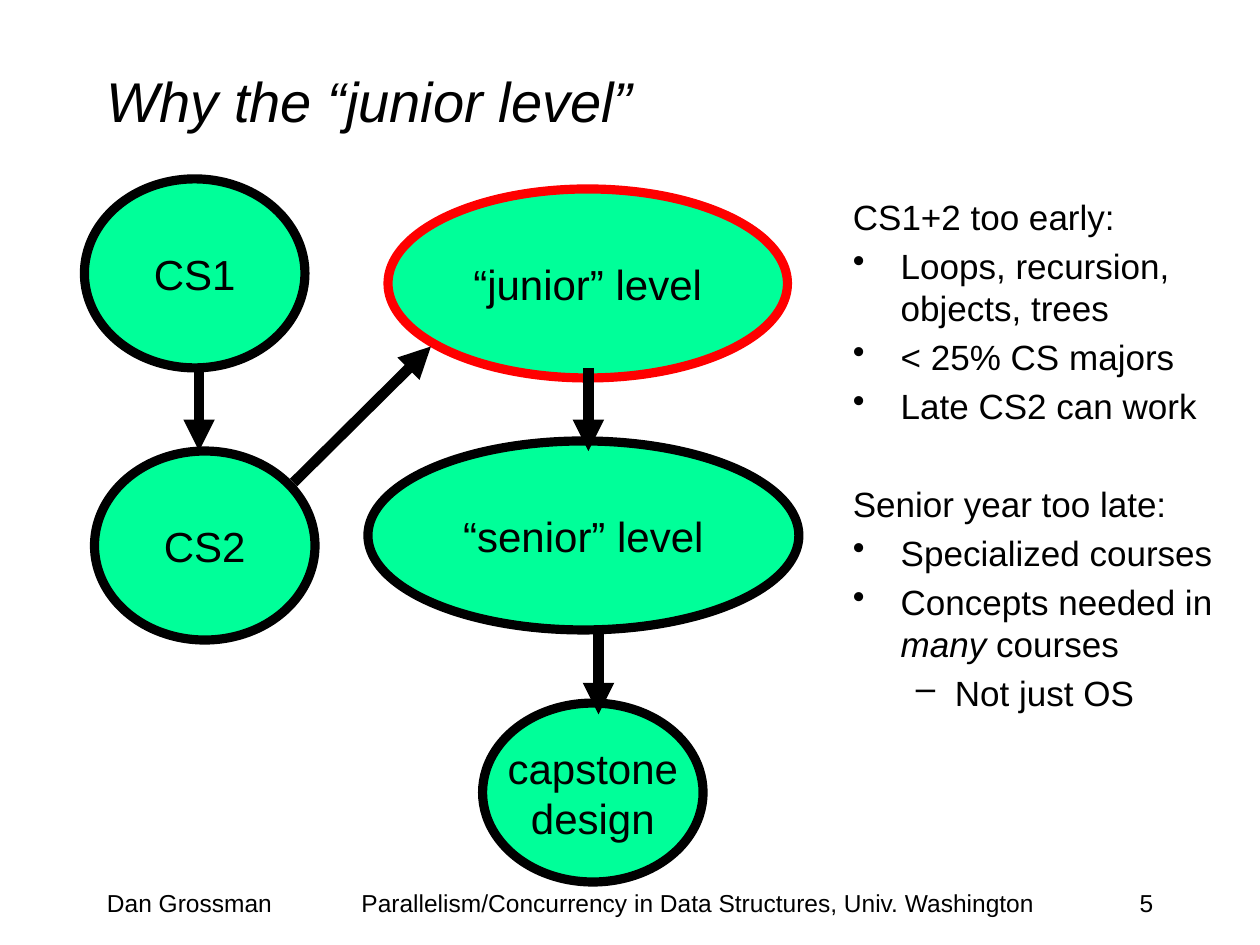
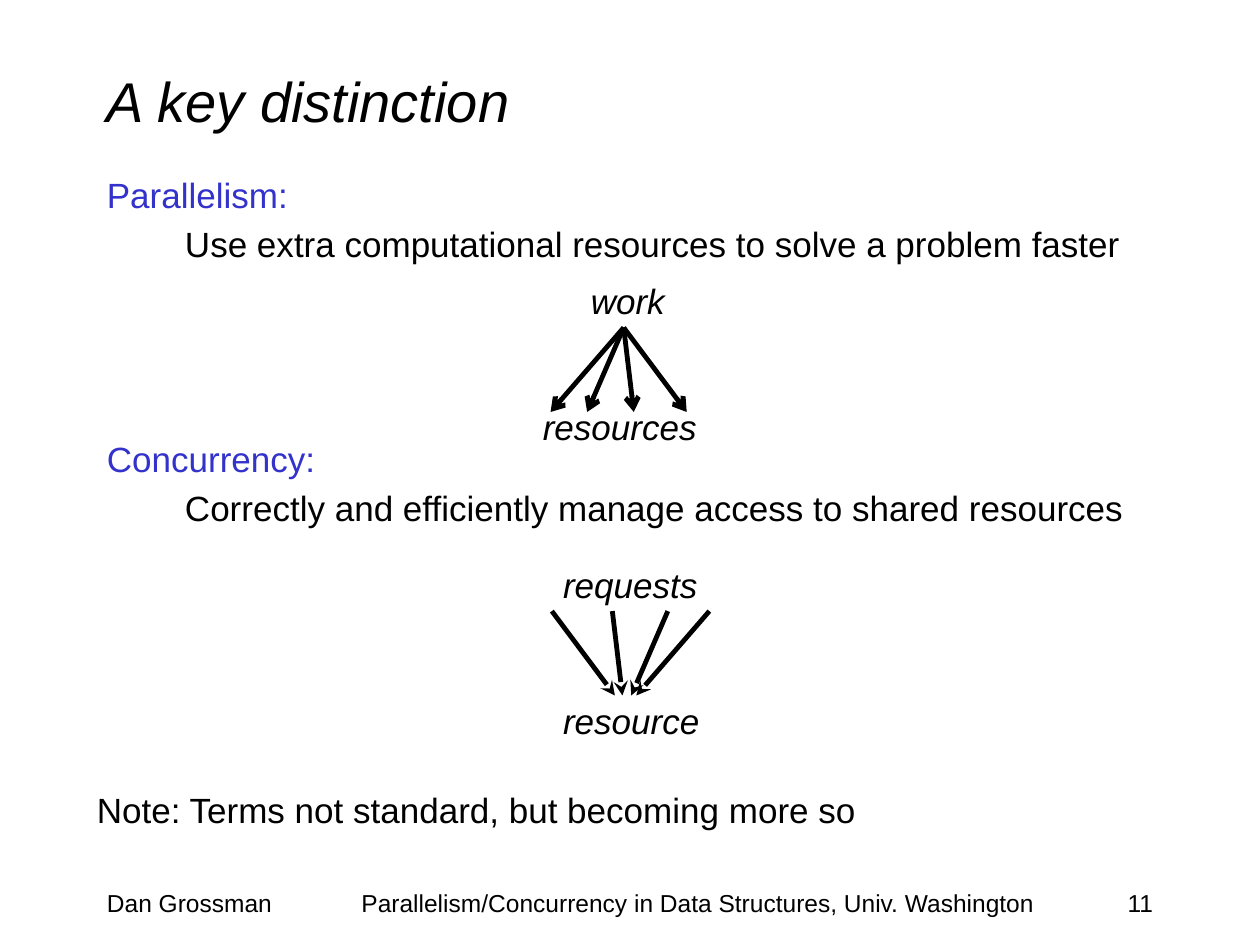
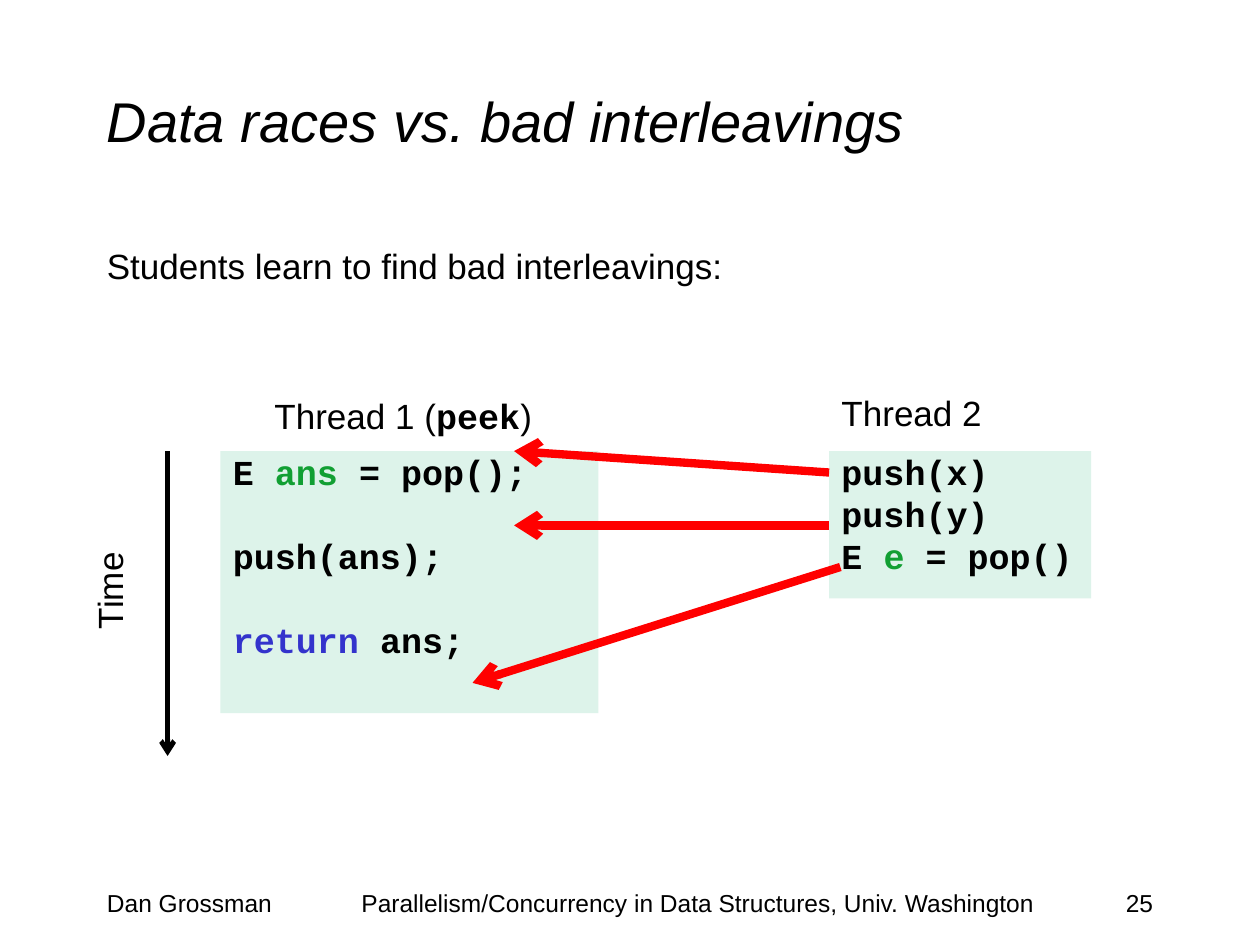
"""Builds three lecture slides on teaching parallelism and concurrency."""
from lxml import etree
from pptx import Presentation
from pptx import util as u
from pptx.dml.color import RGBColor
from pptx.enum import shapes, text
from pptx.oxml import ns

BLACK, RED, BLUE, GREEN = "000000", "FF0000", "3333CC", "119F33"
MINT, PALE = "00FF99", "DDF3EA"
SANS, MONO = "Arial", "Courier New"
LEFT, MID, RIGHT = text.PP_ALIGN.LEFT, text.PP_ALIGN.CENTER, text.PP_ALIGN.RIGHT
hue = RGBColor.from_string


def write(shape, rows, size=20, name=SANS, align=LEFT, gap=0, wrap=True, **style):
    """Fills a shape with rows of plain text or (text, colour) runs."""
    frame = shape.text_frame
    frame.word_wrap = wrap
    for i, row in enumerate(rows):
        para = frame.paragraphs[0] if i == 0 else frame.add_paragraph()
        para.alignment, para.space_before = align, u.Pt(gap)
        font = para.font
        font.size, font.name, font.color.rgb = u.Pt(size), name, hue(BLACK)
        font.italic, font.bold = style.get("italic", False), style.get("bold", False)
        for part, tint in [(row, BLACK)] if isinstance(row, str) else row:
            run = para.add_run()
            run.text = part
            if tint != BLACK:
                run.font.color.rgb = hue(tint)
    return frame


def link(slide, start, end, tint, width, head):
    """Draws an arrow from start to end."""
    ends = [u.Inches(v) for v in (*start, *end)]
    line = slide.shapes.add_connector(shapes.MSO_CONNECTOR.STRAIGHT, *ends)
    line.line.color.rgb, line.line.width = hue(tint), u.Pt(width)
    etree.SubElement(line.line._get_or_add_ln(), ns.qn("a:tailEnd"), type=head)
    etree.SubElement(line._element.spPr, ns.qn("a:effectLst"))


deck = Presentation()
deck.slide_width, deck.slide_height = u.Inches(10), u.Inches(7.5)

pages = []
for title, top, num in [("Why the “junior level”", 0.17, "5"),
                        ("A key distinction", 0.17, "11"),
                        ("Data races vs. bad interleavings", 0.33, "25")]:
    slide = deck.slides.add_slide(deck.slide_layouts[6])
    pages.append(slide)
    box = slide.shapes.add_textbox(*map(u.Inches, (0.75, top, 8.5, 1.25)))
    write(box, [title], 32, italic=True).vertical_anchor = text.MSO_ANCHOR.MIDDLE
    for x, wide, words, align in [
            (0.75, 2.08, "Dan Grossman", LEFT),
            (7.17, 2.08, num, RIGHT),
            (2.75, 5.58, "Parallelism/Concurrency in Data Structures, Univ. Washington", MID)]:
        box = slide.shapes.add_textbox(*map(u.Inches, (x, 7, wide, 0.5)))
        write(box, [words], 14, align=align)
why, key, race = pages

for x, y, wide, high, rim, rows in [
        (0.67, 1.42, 1.75, 1.5, BLACK, ["CS1"]),
        (0.75, 3.58, 1.75, 1.5, BLACK, ["CS2"]),
        (3.08, 1.5, 3.17, 1.5, RED, ["“junior” level"]),
        (2.92, 3.5, 3.42, 1.5, BLACK, ["“senior” level"]),
        (3.83, 5.58, 1.75, 1.42, BLACK, ["capstone", "design"])]:
    oval = why.shapes.add_shape(shapes.MSO_SHAPE.OVAL, *map(u.Inches, (x, y, wide, high)))
    oval.shadow.inherit = False
    oval.fill.solid()
    oval.fill.fore_color.rgb = hue(MINT)
    oval.line.color.rgb, oval.line.width = hue(rim), u.Pt(5.25)
    write(oval, rows, 24, align=MID, wrap=False).vertical_anchor = text.MSO_ANCHOR.MIDDLE
for start, end in [((2.33, 3.83), (3.42, 2.75)), ((1.58, 2.92), (1.58, 3.58)),
                   ((4.67, 2.92), (4.67, 3.58)), ((4.75, 5), (4.75, 5.67))]:
    link(why, start, end, BLACK, 6, "triangle")

box = why.shapes.add_textbox(*map(u.Inches, (6.67, 1.5, 3.08, 5)))
frame = write(box, ["CS1+2 too early:", "Loops, recursion, objects, trees",
                    "< 25% CS majors", "Late CS2 can work",
                    "Senior year too late:", "Specialized courses",
                    [("Concepts needed in ", BLACK), ("many", BLACK), (" courses", BLACK)],
                    "Not just OS"], gap=4)
frame.paragraphs[4].space_before = u.Pt(32)
frame.paragraphs[6].runs[1].font.italic = True
for para, mark in zip(frame.paragraphs, " ••• ••–"):
    if mark != " ":
        left, hang = (0.81, 0.31) if mark == "–" else (0.38, 0.38)
        props = para._p.get_or_add_pPr()
        props.set("marL", str(u.Inches(left)))
        props.set("indent", str(-u.Inches(hang)))
        bullet = etree.Element(ns.qn("a:buChar"), char=mark)
        props.insert(1, bullet)

for y, term, gist in [
        (1.33, "Parallelism:", "Use extra computational resources to solve a problem faster"),
        (3.42, "Concurrency:", "Correctly and efficiently manage access to shared resources")]:
    box = key.shapes.add_textbox(*map(u.Inches, (0.75, y, 8.5, 0.92)))
    frame = write(box, [[(term, BLUE)], gist], gap=4)
    frame.paragraphs[1]._p.get_or_add_pPr().set("marL", str(u.Inches(0.62)))
for x in (4.37, 4.66, 5.03, 5.45):
    link(key, (4.95, 2.6), (x, 3.27), BLACK, 2.75, "arrow")
for x, to in [(5.63, 5.05), (5.3, 5.01), (4.86, 4.94), (4.38, 4.88)]:
    link(key, (x, 4.85), (to, 5.52), BLACK, 2.75, "stealth")
box = key.shapes.add_textbox(*map(u.Inches, (0.67, 6.21, 8.17, 0.46)))
write(box, ["Note: Terms not standard, but becoming more so"], gap=4)

box = race.shapes.add_textbox(*map(u.Inches, (0.75, 1.89, 8.5, 0.94)))
write(box, ["Students learn to find bad interleavings:"], gap=4)
for x, wide, high, skip, rows in [
        (1.75, 3, 2.08, 28, [[("E ", BLACK), ("ans", GREEN), (" = pop();", BLACK)],
                             "push(ans);", [("return ", BLUE), ("ans;", BLACK)]]),
        (6.58, 2.08, 1.17, 4, ["push(x)", "push(y)",
                               [("E ", BLACK), ("e", GREEN), (" = pop()", BLACK)]])]:
    code = race.shapes.add_shape(shapes.MSO_SHAPE.RECTANGLE, *map(u.Inches, (x, 3.58, wide, high)))
    code.shadow.inherit = False
    code.fill.solid()
    code.fill.fore_color.rgb = hue(PALE)
    code.line.fill.background()
    frame = write(code, rows, name=MONO, gap=skip, bold=True)
    frame.vertical_anchor = text.MSO_ANCHOR.TOP
    frame.paragraphs[0].space_before = u.Pt(4)
    for para in frame.paragraphs:
        para.line_spacing = u.Pt(20)
link(race, (1.33, 3.58), (1.33, 6), BLACK, 2.75, "arrow")
for start, end in [((6.58, 4.17), (4.08, 4.17)), ((6.58, 3.75), (4.08, 3.58)),
                   ((6.67, 4.5), (3.75, 5.42))]:
    link(race, start, end, RED, 4.75, "arrow")

for slide, x, y, wide, row, turn in [
        (key, 4.59, 2.17, 0.79, "work", 0),
        (key, 4.21, 3.17, 1.43, "resources", 0),
        (key, 4.37, 4.42, 1.28, "requests", 0),
        (key, 4.37, 5.5, 1.29, "resource", 0),
        (race, 0.46, 4.46, 0.82, "Time", 270),
        (race, 6.58, 3.06, 1.32, "Thread 2", 0),
        (race, 2.08, 3.08, 2.26, [("Thread 1 (", BLACK), ("peek", BLACK), (")", BLACK)], 0)]:
    box = slide.shapes.add_textbox(*map(u.Inches, (x, y, wide, 0.44)))
    box.rotation = turn
    frame = write(box, [row], wrap=False, italic=slide is key)
    frame.auto_size = text.MSO_AUTO_SIZE.SHAPE_TO_FIT_TEXT
peek = frame.paragraphs[0].runs[1].font
peek.name, peek.bold = MONO, True

deck.save("out.pptx")
